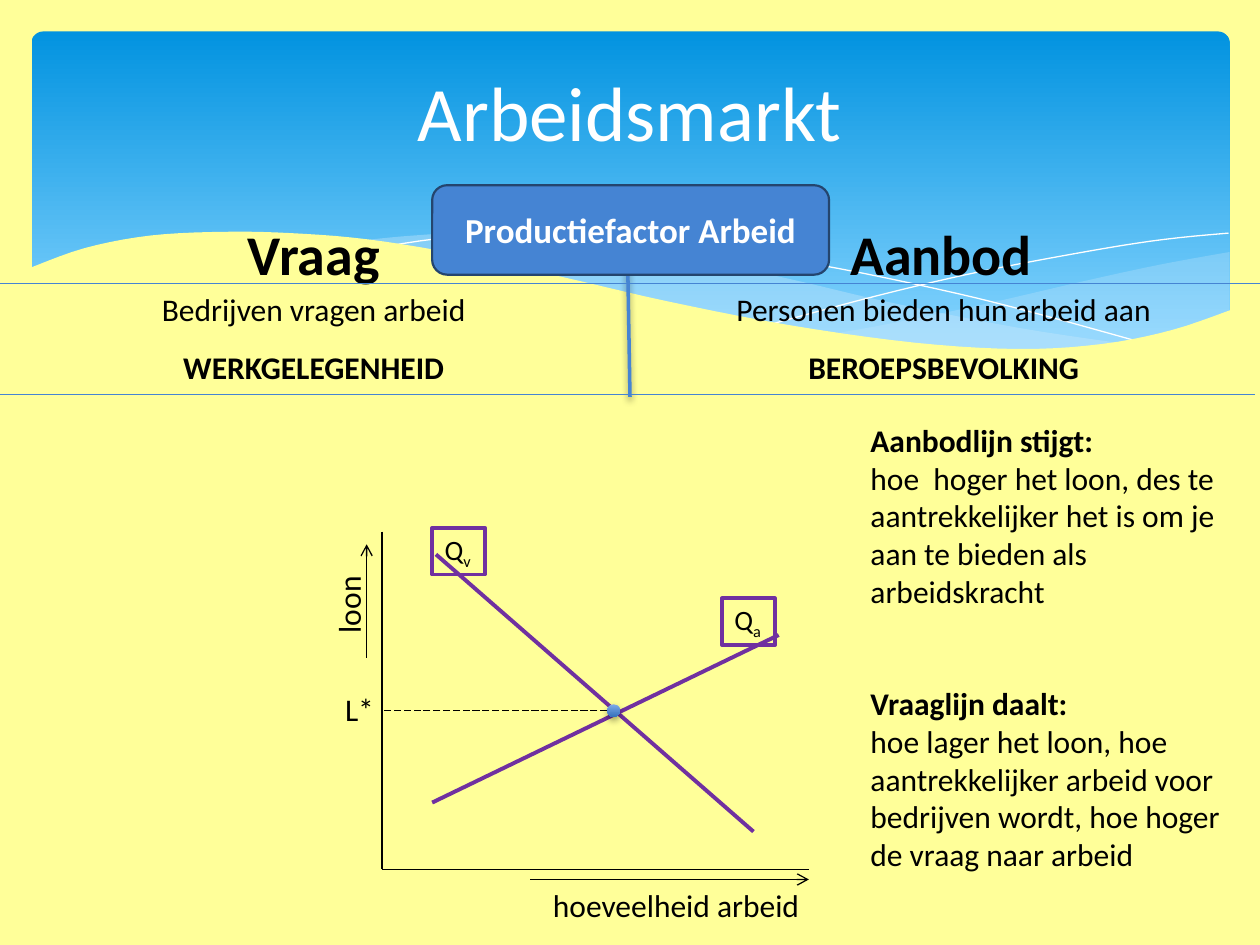
from dataclasses import dataclass

from lxml import etree
from pptx import Presentation
from pptx.dml.color import RGBColor
from pptx.enum.dml import MSO_LINE
from pptx.enum.shapes import MSO_CONNECTOR, MSO_SHAPE
from pptx.enum.text import MSO_ANCHOR, PP_ALIGN
from pptx.oxml.ns import qn
from pptx.util import Inches, Pt

STRAIGHT = MSO_CONNECTOR.STRAIGHT
ROUNDED, RECT, OVAL = MSO_SHAPE.ROUNDED_RECTANGLE, MSO_SHAPE.RECTANGLE, MSO_SHAPE.OVAL
LEFT, CENTER, MIDDLE = PP_ALIGN.LEFT, PP_ALIGN.CENTER, MSO_ANCHOR.MIDDLE


@dataclass(frozen=True)
class Theme:
    font: str = "Calibri"
    paper: str = "FFFF99"
    white: str = "FFFFFF"
    ink: str = "000000"
    blue: str = "4584D3"
    blue_edge: str = "24456E"
    purple: str = "7030A0"
    mist: str = "C6E7FC"
    sky: tuple = (("0293E0", 0), ("83D3FE", 0.9))
    dot: tuple = (("80ACEA", 0), ("3570BA", 1))
    title: int = 44
    heading: int = 32
    box: int = 20
    body: int = 18
    label: int = 16


T = Theme()
W, H = 10, 7.5
HALF = W / 2

TITLE = "Arbeidsmarkt"
FACTOR = "Productiefactor Arbeid"
SIDES = [  # heading, sentence, term
    ("Vraag", "Bedrijven vragen arbeid", "WERKGELEGENHEID"),
    ("Aanbod", "Personen bieden hun arbeid aan", "BEROEPSBEVOLKING"),
]
NOTES = [  # top, heading, explanation
    (3.29, "Aanbodlijn stijgt:", "hoe  hoger het loon, des te aantrekkelijker het is "
     "om je aan te bieden als arbeidskracht"),
    (5.38, "Vraaglijn daalt:", "hoe lager het loon, hoe aantrekkelijker arbeid voor "
     "bedrijven wordt, hoe hoger de vraag naar arbeid"),
]
CURVES = [  # subscript, start, end, label position
    ("v", (3.46, 4.4), (5.98, 6.6), (3.43, 4.19)),
    ("a", (3.43, 6.37), (6.18, 5.04), (5.73, 4.75)),
]
ORIGIN, AXIS_TOP, AXIS_RIGHT = (3.03, 6.9), 4.22, 6.42
BALANCE, DOT = (4.87, 5.64), 0.1

# Waves: each edge is a list of knots joined by a smooth curve
MIST_RIGHT = [
    [(9.76, 2), (9.21, 2.1), (8.61, 2.23), (7.79, 2.42), (7.06, 2.57), (6.61, 2.65)],
    [(6.61, 2.65), (7.05, 2.71), (7.57, 2.76), (8.14, 2.78), (8.72, 2.74),
     (9.28, 2.63), (9.76, 2.47)],
]
MIST_BAND = [
    [(8.93, 2.73), (8.07, 2.6), (7.06, 2.4), (6.29, 2.22), (5.41, 2.03), (4.65, 1.91),
     (3.8, 1.85), (3.28, 1.87), (2.86, 1.91)],
    [(2.86, 1.91), (3.62, 2.03), (4.49, 2.22), (5.66, 2.48), (6.5, 2.64), (7.22, 2.74),
     (7.85, 2.78), (8.38, 2.78), (8.93, 2.73)],
]
PAPER_WAVE = [
    [(9.77, 2.46), (9.3, 2.62), (8.75, 2.73), (8.09, 2.77), (7.26, 2.72), (6.26, 2.58),
     (5.29, 2.39), (4.47, 2.2), (3.65, 2.02), (2.92, 1.9), (2.3, 1.85), (1.77, 1.84),
     (1.19, 1.87), (0.67, 1.97), (0.23, 2.13)],
    [(0.23, 3.29), (9.77, 3.29)],
]
THREADS = [
    [(3.09, 1.95), (3.53, 1.89), (4.16, 1.87), (4.89, 1.9), (5.82, 2), (6.65, 2.13),
     (7.6, 2.33), (8.31, 2.51), (9.07, 2.72)],
    [(6.13, 2.57), (6.95, 2.35), (7.76, 2.16), (8.66, 1.99), (9.24, 1.9), (9.75, 1.85)],
]


def rgb(value):
    return RGBColor.from_string(value)


def smooth(knots, steps=5):
    """Points on a Catmull-Rom curve through the knots."""
    padded = [knots[0], *knots, knots[-1]]
    points = [knots[0]]
    for a, b, c, d in zip(padded, padded[1:], padded[2:], padded[3:]):
        for t in (i / steps for i in range(1, steps + 1)):
            points.append(tuple(
                0.5 * (2 * q + (r - p) * t + (2 * p - 5 * q + 4 * r - s) * t ** 2
                       + (3 * q - p - 3 * r + s) * t ** 3)
                for p, q, r, s in zip(a, b, c, d)))
    return points


def effects(shape, shadow=False):
    lst = etree.SubElement(shape._element.spPr, qn("a:effectLst"))
    if shadow:
        sh = etree.SubElement(lst, qn("a:outerShdw"), blurRad=str(Pt(4)), dist=str(Pt(2)),
                              dir="5400000", rotWithShape="0")
        color = etree.SubElement(sh, qn("a:srgbClr"), val=T.ink)
        etree.SubElement(color, qn("a:alpha"), val="38000")


def paint(shape, fill=None, line=None, width=1, shadow=False):
    """Fill is a colour, a tuple of gradient stops, or None."""
    if fill is None:
        shape.fill.background()
    elif isinstance(fill, tuple):
        shape.fill.gradient()
        shape.fill.gradient_angle = 270
        for stop, (color, position) in zip(shape.fill.gradient_stops, fill):
            stop.color.rgb, stop.position = rgb(color), position
    else:
        shape.fill.solid()
        shape.fill.fore_color.rgb = rgb(fill)
    if line:
        shape.line.color.rgb, shape.line.width = rgb(line), Pt(width)
    else:
        shape.line.fill.background()
    effects(shape, shadow)
    return shape


def add_shape(shapes, kind, box, **style):
    return paint(shapes.add_shape(kind, *map(Inches, box)), **style)


def add_wave(shapes, edges, closed=True, alpha=None, **style):
    points = [(Inches(x), Inches(y)) for edge in edges for x, y in smooth(edge)]
    builder = shapes.build_freeform(*points[0], scale=1.0)
    builder.add_line_segments(points[1:], close=closed)
    sp = paint(builder.convert_to_shape(), **style)
    if alpha:
        color = sp._element.spPr.find(qn("a:solidFill"))[0]
        etree.SubElement(color, qn("a:alpha"), val=str(alpha * 1000))


def add_line(shapes, start, end, color, width, arrow=False, dash=None, shadow=False):
    ln = shapes.add_connector(STRAIGHT, *map(Inches, (*start, *end)))
    ln.line.color.rgb, ln.line.width = rgb(color), Pt(width)
    if dash:
        ln.line.dash_style = dash
    if arrow:
        etree.SubElement(ln.line._get_or_add_ln(), qn("a:tailEnd"), type="arrow")
    effects(ln, shadow)


def write(shape, paragraphs, size, color=T.ink, align=LEFT, wrap=True, gap=0):
    """Each paragraph is a list of (text, bold, baseline) runs."""
    tf = shape.text_frame
    tf.word_wrap = wrap
    for i, runs in enumerate(paragraphs):
        p = tf.add_paragraph() if i else tf.paragraphs[0]
        p.alignment = align
        if i and gap:
            p.space_before = Pt(gap)
        for text, bold, baseline in runs:
            r = p.add_run()
            r.text, r.font.name, r.font.size = text, T.font, Pt(size)
            r.font.bold, r.font.color.rgb = bold, rgb(color)
            if baseline:
                r._r.get_or_add_rPr().set("baseline", str(baseline * 1000))
    return tf


def line_of(text, bold=False):
    return [(text, bold, 0)]


def add_text(shapes, box, paragraphs, size=T.body, **style):
    tb = shapes.add_textbox(*map(Inches, box))
    write(tb, paragraphs, size, **style)
    return tb


def add_backdrop(shapes):
    sky = add_shape(shapes, ROUNDED, (0.25, 0.25, 9.51, 2.7), fill=T.sky)
    sky.adjustments[0] = 0.034
    add_wave(shapes, MIST_RIGHT, fill=T.mist, alpha=29)
    add_wave(shapes, MIST_BAND, fill=T.mist, alpha=40)
    for thread in THREADS:
        add_wave(shapes, [thread], closed=False, line=T.white, width=0)
    add_wave(shapes, PAPER_WAVE, fill=T.paper)


def add_title(shapes):
    title = shapes.title
    title.left, title.top, title.width, title.height = map(Inches, (0.5, 0.29, 9, 1.18))
    write(title, [line_of(TITLE)], T.title, T.white, CENTER).vertical_anchor = MIDDLE
    shapes._spTree.append(title._element)


def add_sides(shapes):
    add_line(shapes, (4.98, 1.99), (HALF, 3.15), T.blue, 2, shadow=True)
    for i, (heading, sentence, term) in enumerate(SIDES):
        add_text(shapes, (i * 4.98, 1.69, 4.98, 0.64), [line_of(heading, True)],
                 T.heading, align=CENTER)
        add_text(shapes, (i * HALF, 2.25, 4.98, 0.89),
                 [line_of(sentence), line_of(term, True)], align=CENTER, gap=12)
    box = add_shape(shapes, ROUNDED, (3.43, 1.47, 3.15, 0.71), fill=T.blue,
                    line=T.blue_edge, width=1.25)
    write(box, [line_of(FACTOR, True)], T.box, T.white, CENTER).vertical_anchor = MIDDLE
    for x, y in ((0, 2.25), (-0.04, 3.13)):
        add_line(shapes, (x, y), (x + W, y), T.blue, 0.75)


def add_graph(shapes):
    for sub, start, end, corner in CURVES:
        add_line(shapes, start, end, T.purple, 2.25)
        label = add_shape(shapes, RECT, (*corner, 0.42, 0.37), line=T.purple, width=2.25)
        write(label, [[("Q", False, 0), (sub, False, -25)]], T.label, wrap=False)
    x0, y0 = ORIGIN
    add_line(shapes, ORIGIN, (AXIS_RIGHT, y0), T.ink, 1)
    add_line(shapes, (x0, AXIS_TOP), ORIGIN, T.ink, 1)
    add_line(shapes, (4.21, y0 + 0.08), (AXIS_RIGHT, y0 + 0.08), T.ink, 0.75, arrow=True)
    add_line(shapes, (x0 - 0.12, 5.22), (x0 - 0.12, 4.32), T.ink, 0.75, arrow=True)
    add_text(shapes, (2.41, 4.57, 0.71, 0.4), [line_of("loon")]).rotation = 270
    add_text(shapes, (4.29, 6.98, 2.18, 0.4), [line_of("hoeveelheid arbeid")], wrap=False)
    x, y = BALANCE
    add_shape(shapes, OVAL, (x - DOT / 2, y - DOT / 2, DOT, DOT), fill=T.dot, shadow=True)
    add_line(shapes, (x - DOT / 2, y), (x0, y), T.ink, 0.5, dash=MSO_LINE.LONG_DASH)
    add_text(shapes, (2.64, 5.43, 0.44, 0.4), [line_of("L*")], wrap=False)


def main():
    prs = Presentation()
    prs.slide_width, prs.slide_height = Inches(W), Inches(H)
    s = prs.slides.add_slide(prs.slide_layouts[5])
    s.background.fill.solid()
    s.background.fill.fore_color.rgb = rgb(T.paper)
    for add_part in (add_backdrop, add_title, add_sides, add_graph):
        add_part(s.shapes)
    for top, heading, explanation in NOTES:
        add_text(s.shapes, (6.81, top, 2.99, 1.62),
                 [line_of(heading, True), line_of(explanation)])
    prs.save("out.pptx")


if __name__ == "__main__":
    main()
